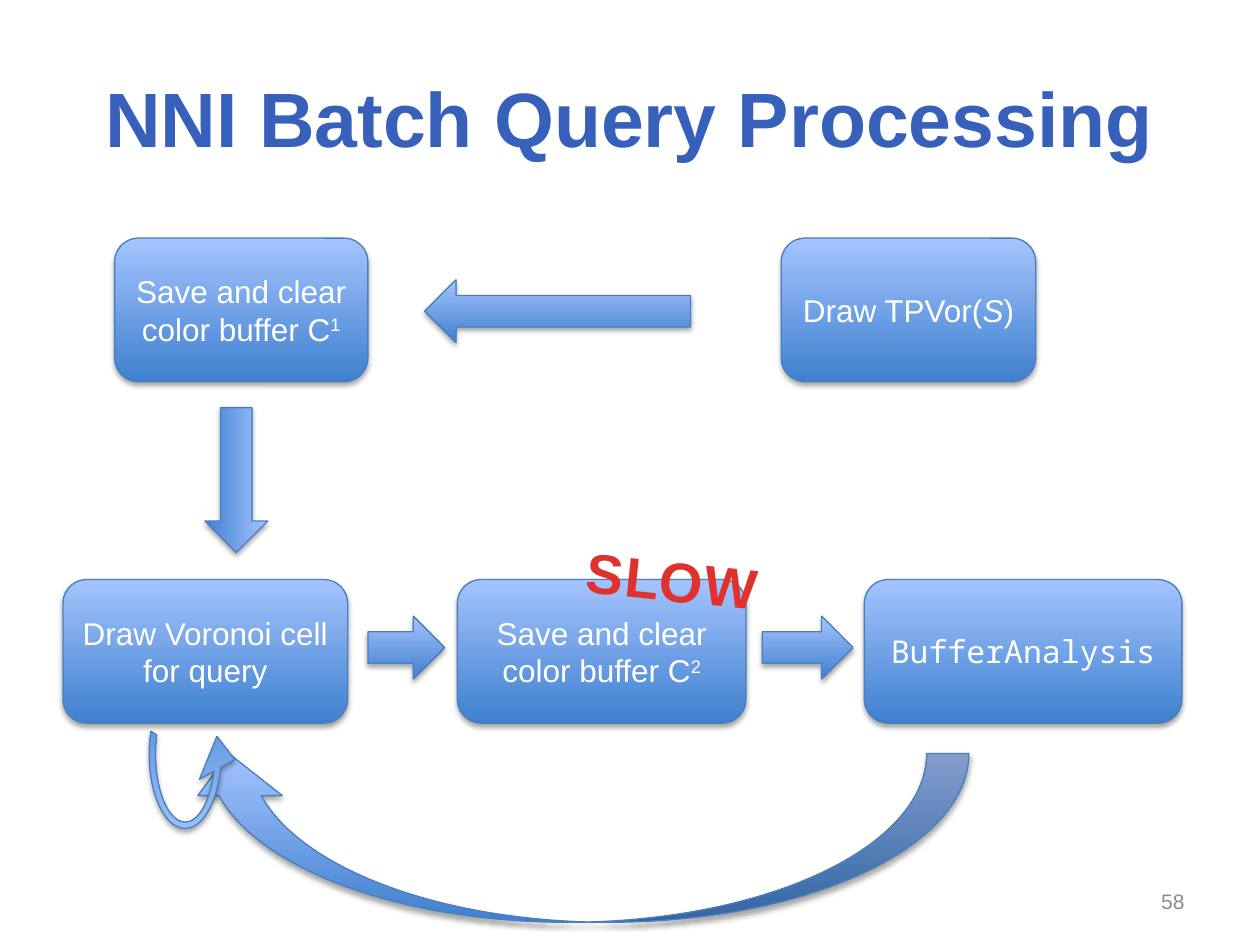
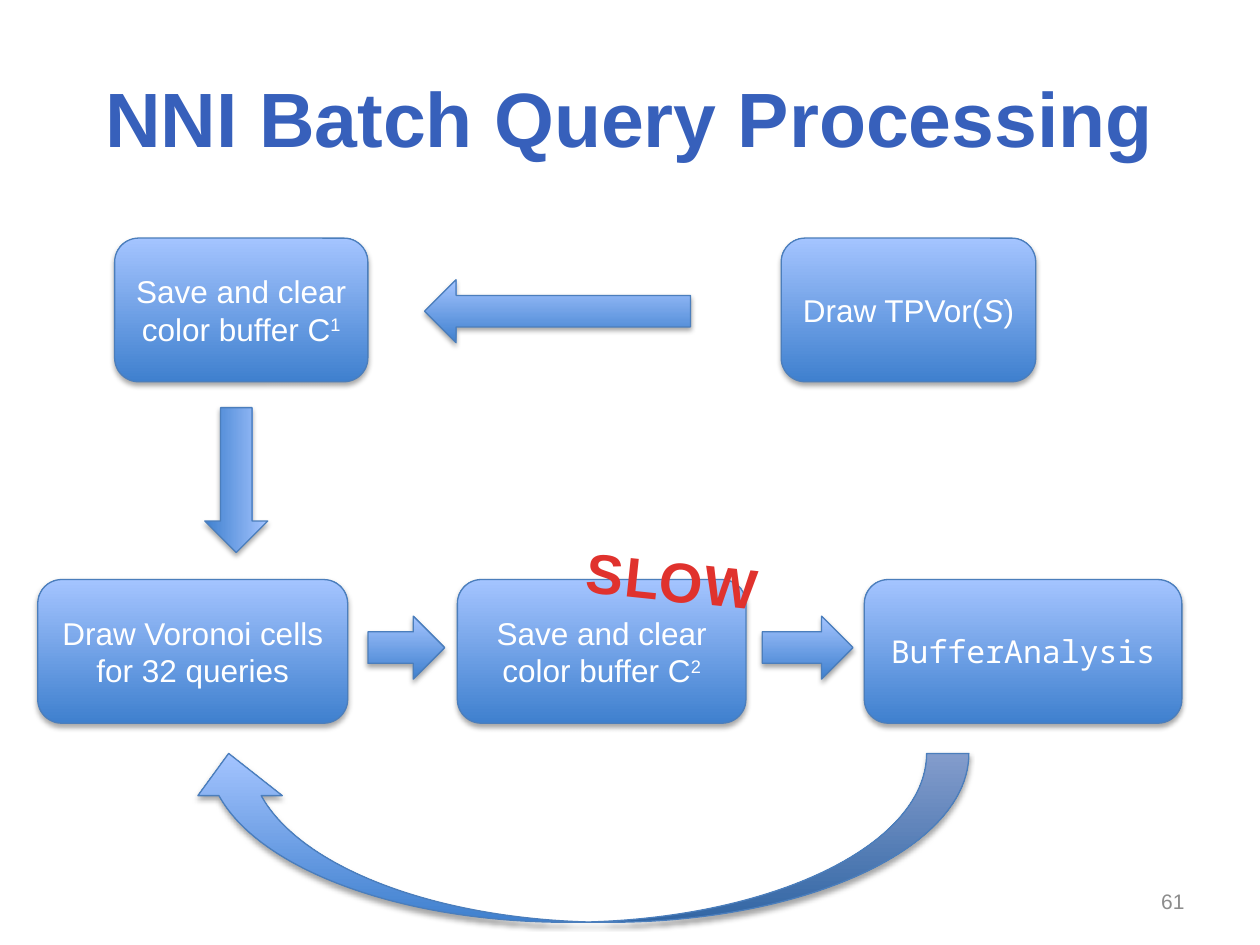
"""Build two slides on NNI batch query processing as flow diagrams."""
from lxml.etree import SubElement
from pptx import Presentation
from pptx.dml.color import RGBColor
from pptx.enum.shapes import MSO_SHAPE
from pptx.enum.text import MSO_ANCHOR, PP_ALIGN
from pptx.oxml.ns import qn
from pptx.util import Inches, Pt

C = {"title": "3760BB", "page": "8C8C8C", "white": "FFFFFF", "line": "4B7EBC",
     "dark": "3F80CE", "light": "A4C4FF", "red": "E0322D", "maroon": "A2201C",
     "shadow": "000000"}
FONT, MONO = "Arial", "Noto Sans Mono"

prs = Presentation()
prs.slide_width, prs.slide_height = Inches(10), Inches(7.5)
COL, ROW = prs.slide_width / 100, prs.slide_height / 75

BOX_H, ARROW_H = 11.4, 5
TOP, LOW = 18.9, 46
SUP = {"baseline": "30000"}
SAVE = "Save and clear color buffer C"
PAGES = [("58", 5, "Draw Voronoi cell for query", True),
         ("61", 3, "Draw Voronoi cells for 32 queries", False)]
BOXES = [(36.3, LOW, 22.9, FONT, [(SAVE, {}), ("2", SUP)]),
         (68.6, LOW, 25.2, MONO, [("BufferAnalysis", {})]),
         (62, TOP, 20.2, FONT, [("Draw TPVor(", {}), ("S", {"i": "1"}), (")", {})]),
         (9.1, TOP, 20.1, FONT, [(SAVE, {}), ("1", SUP)])]
ARROWS = [(60.5, 48.9, 7.2, 0, None),
          (29.2, 48.9, 6.1, 0, None),
          (33.7, 22.2, 21.1, 0, "flipH"),
          (13, 35.6, 11.5, 90, None)]
LOOP_ADJ = [0.06, 32.72, 200.73, 87.75, 0.19]


def add_shape(slide, kind, x, y, w, h, flip=None):
    s = slide.shapes.add_shape(kind, *map(round, (x * COL, y * ROW, w * COL, h * ROW)))
    s.fill.gradient()
    s.fill.gradient_angle = 90
    for stop, pos, name in zip(s.fill.gradient_stops, (0, 1), ("dark", "light")):
        stop.position = pos
        stop.color.rgb = RGBColor.from_string(C[name])
    s.line.color.rgb = RGBColor.from_string(C["line"])
    s.line.width = Pt(0.75)
    s.shadow.inherit = False
    sp = s._element.spPr
    shadow = SubElement(sp.find(qn("a:effectLst")), qn("a:outerShdw"),
                        blurRad=str(Pt(3.1)), dist=str(Pt(1.8)),
                        dir="5400000", rotWithShape="0")
    color = SubElement(shadow, qn("a:srgbClr"), val=C["shadow"])
    SubElement(color, qn("a:alpha"), val="35000")
    if flip:
        sp.find(qn("a:xfrm")).set(flip, "1")
    return s


def write(s, runs, size, color, font=FONT, align=PP_ALIGN.CENTER, anchor=MSO_ANCHOR.MIDDLE):
    tf = s.text_frame
    tf.word_wrap = True
    tf.vertical_anchor = anchor
    p = tf.paragraphs[0]
    p.alignment = align
    for text, marks in runs:
        r = p.add_run()
        r.text = text
        r.font.name = font
        r.font.size = Pt(size)
        r.font.color.rgb = RGBColor.from_string(C[color])
        for key, value in marks.items():
            r._r.get_or_add_rPr().set(key, value)
    return r


for page, left, query, has_loop in PAGES:
    slide = prs.slides.add_slide(prs.slide_layouts[6])

    title = slide.shapes.add_textbox(*map(round, (5 * COL, 3 * ROW, 90 * COL, 12.5 * ROW)))
    write(title, [("NNI Batch Query Processing", {"b": "1"})], 44, "title")
    number = slide.shapes.add_textbox(*map(round, (71.7 * COL, 69.5 * ROW, 23.3 * COL, 4 * ROW)))
    write(number, [(page, {})], 12, "page", align=PP_ALIGN.RIGHT)

    first = (left, LOW, 27.6 - left, FONT, [(query, {})])
    for x, y, w, font, runs in [first] + BOXES:
        s = add_shape(slide, MSO_SHAPE.ROUNDED_RECTANGLE, x, y, w, BOX_H)
        write(s, runs, 18, "white", font)

    for x, y, w, turn, flip in ARROWS:
        s = add_shape(slide, MSO_SHAPE.RIGHT_ARROW, x, y, w, ARROW_H, flip)
        s.rotation = turn

    slow = slide.shapes.add_textbox(*map(round, (43.1 * COL, 42.8 * ROW, 20.5 * COL, 6.4 * ROW)))
    slow.rotation = 6
    r = write(slow, [("SLOW", {"b": "1", "spc": "50"})], 32, "red", anchor=MSO_ANCHOR.TOP)
    r.font.fill.gradient()
    r.font.fill.gradient_angle = 270
    for stop, pos, name in zip(r.font.fill.gradient_stops, (0.25, 1), ("red", "maroon")):
        stop.position = pos
        stop.color.rgb = RGBColor.from_string(C[name])

    add_shape(slide, MSO_SHAPE.CURVED_UP_ARROW, 14.8, 59.8, 62.1, 13.4, "flipH")
    if has_loop:
        s = add_shape(slide, MSO_SHAPE.CIRCULAR_ARROW, 10.5, 52.6, 8.4, 14.5, "flipV")
        for i, value in enumerate(LOOP_ADJ):
            s.adjustments[i] = value

prs.save("out.pptx")
